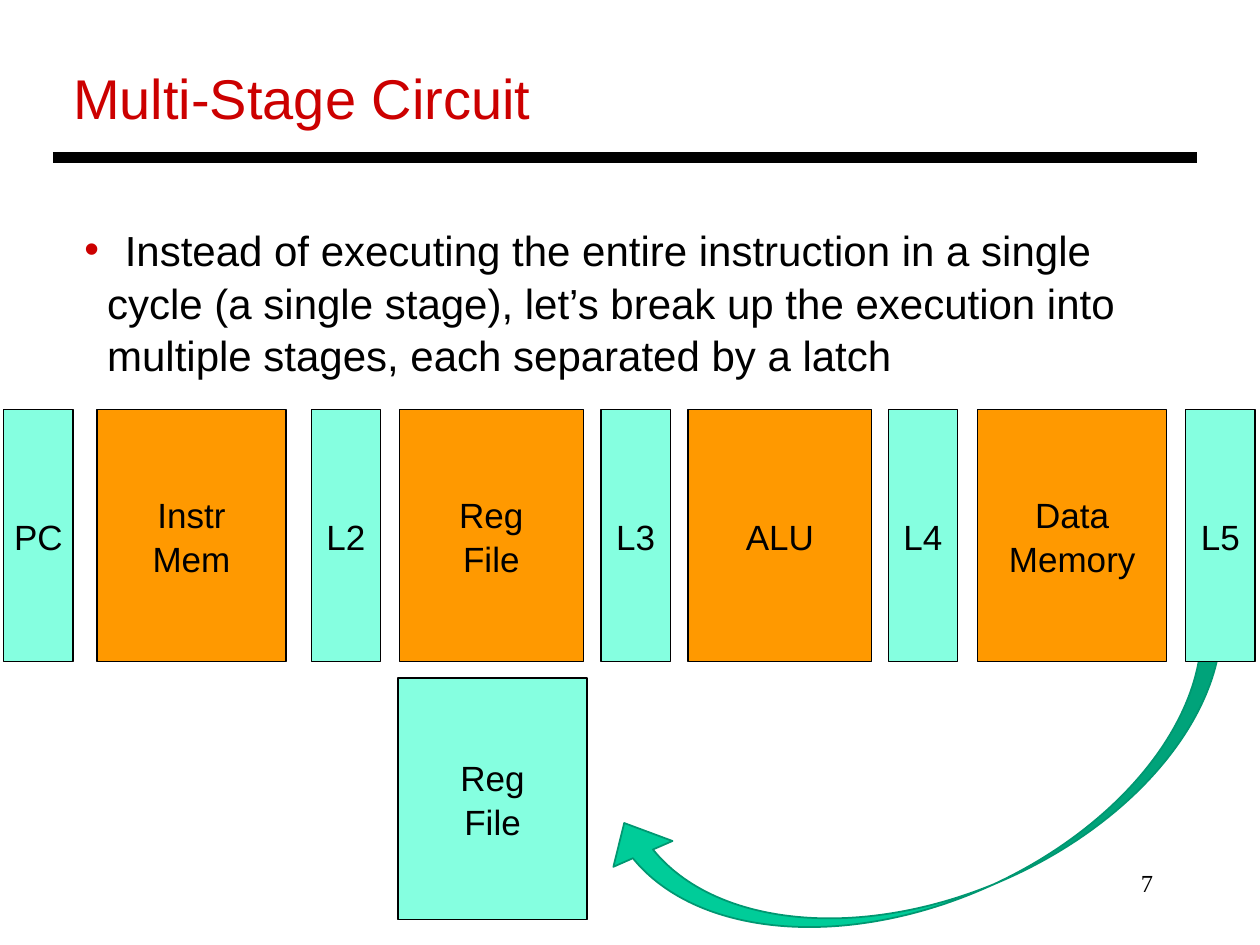
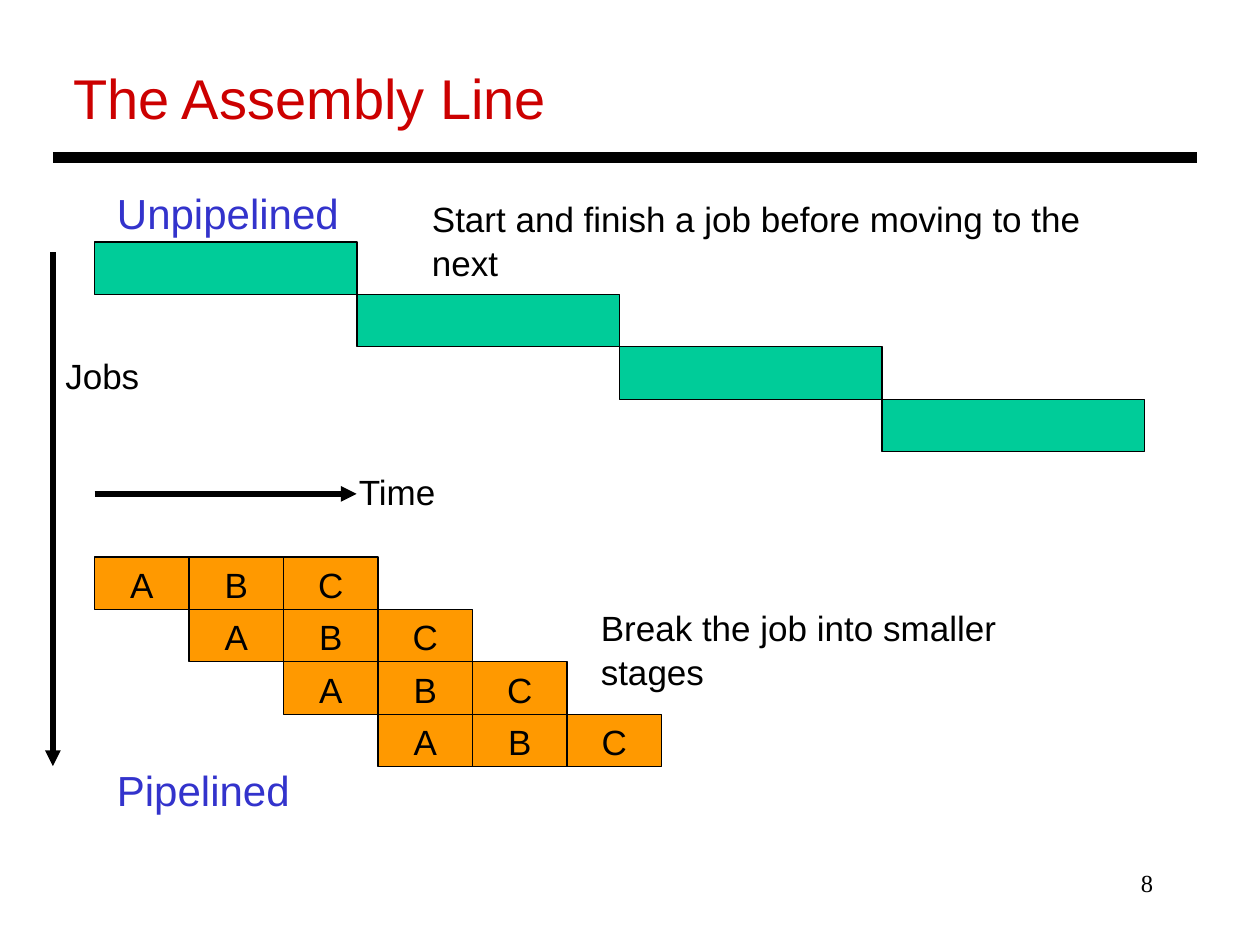
from pptx import Presentation
from pptx.dml.color import RGBColor
from pptx.enum.shapes import MSO_CONNECTOR, MSO_SHAPE
from pptx.enum.text import MSO_ANCHOR, MSO_AUTO_SIZE, PP_ALIGN
from pptx.oxml.ns import qn
from pptx.util import Inches, Pt
from lxml.etree import SubElement

BLACK = RGBColor(0x00, 0x00, 0x00)
RED = RGBColor(0xCC, 0x00, 0x00)
BLUE = RGBColor(0x33, 0x33, 0xCC)
AQUA = RGBColor(0x85, 0xFF, 0xE0)
ORANGE = RGBColor(0xFF, 0x99, 0x00)
GREEN = RGBColor(0x00, 0xCC, 0x99)
TEAL = RGBColor(0x00, 0x97, 0x71)

LIST, PLAIN = 1, 5


class Deck:
    def __init__(self):
        self.prs = Presentation()
        self.prs.slide_width = Inches(10)
        self.prs.slide_height = Inches(7.5)
        self.slide = None

    def style(self, frame, size, color=BLACK, align=PP_ALIGN.LEFT, font="Arial"):
        for para in frame.paragraphs:
            para.alignment = align
            para.line_spacing = 1.05
            para.space_before = Pt(0)
            for run in para.runs:
                run.font.size = Pt(size)
                run.font.name = font
                run.font.color.rgb = color

    def place(self, shape, left, top, width, height):
        shape.left, shape.top = Inches(left), Inches(top)
        shape.width, shape.height = Inches(width), Inches(height)
        frame = shape.text_frame
        frame.auto_size = MSO_AUTO_SIZE.NONE
        frame.vertical_anchor = MSO_ANCHOR.TOP
        frame.word_wrap = True
        return frame

    def page(self, layout, title, number):
        self.slide = self.prs.slides.add_slide(self.prs.slide_layouts[layout])
        frame = self.place(self.slide.shapes.title, 0.48, 0.43, 9, 0.64)
        frame.text = title
        self.style(frame, 32, RED)
        self.label(str(number), 7.17, 6.83, 2.08, 14, align=PP_ALIGN.RIGHT,
                   font="Times New Roman")
        self.line((0.42, 1.25), (9.5, 1.25), 6)

    def body(self, lines, left, top, width, height):
        frame = self.place(self.slide.placeholders[1], left, top, width, height)
        frame.text = "\n".join(lines)
        self.style(frame, 24)
        for i, para in enumerate(frame.paragraphs):
            props = para._p.get_or_add_pPr()
            first = i == 0
            props.set("marL", str(Inches(0.32 if first else 0.18)))
            props.set("indent", str(Inches(-0.32 if first else 0)))
            if first:
                tint = SubElement(props, qn("a:buClr"))
                SubElement(tint, qn("a:srgbClr"), val=str(RED))
                SubElement(props, qn("a:buChar"), char="•")
            else:
                SubElement(props, qn("a:buNone"))

    def label(self, text, left, top, width, size=20, color=BLACK, **look):
        box = self.slide.shapes.add_textbox(0, 0, 0, 0)
        frame = self.place(box, left, top, width, 0.5)
        frame.text = text
        self.style(frame, size, color, **look)

    def shape(self, kind, left, top, width, height, fill, edge=BLACK, weight=0.75):
        shape = self.slide.shapes.add_shape(
            kind, Inches(left), Inches(top), Inches(width), Inches(height))
        shape.shadow.inherit = False
        shape.fill.solid()
        shape.fill.fore_color.rgb = fill
        shape.line.color.rgb = edge
        shape.line.width = Pt(weight)
        return shape

    def box(self, left, top, width, height, fill, text=""):
        shape = self.shape(MSO_SHAPE.RECTANGLE, left, top, width, height, fill)
        if text:
            frame = shape.text_frame
            frame.text = text
            frame.word_wrap = False
            frame.vertical_anchor = MSO_ANCHOR.MIDDLE
            self.style(frame, 20, align=PP_ALIGN.CENTER)

    def swoop(self, left, top, width, height, turn, bends):
        shape = self.shape(MSO_SHAPE.CURVED_DOWN_ARROW, left, top, width, height,
                           GREEN, TEAL, 1)
        shape.rotation = turn
        for i, bend in enumerate(bends):
            shape.adjustments[i] = bend

    def line(self, start, end, weight, arrow=False):
        points = [Inches(v) for v in (*start, *end)]
        link = self.slide.shapes.add_connector(MSO_CONNECTOR.STRAIGHT, *points)
        link.line.color.rgb = BLACK
        link.line.width = Pt(weight)
        if arrow:
            SubElement(link.line._get_or_add_ln(), qn("a:tailEnd"), type="triangle")
        SubElement(link._element.spPr, qn("a:effectLst"))


def stages(deck):
    deck.page(LIST, "Multi-Stage Circuit", 7)
    deck.body(["Instead of executing the entire instruction in a single",
               "cycle (a single stage), let’s break up the execution into",
               "multiple stages, each separated by a latch"],
              0.57, 1.71, 8.8, 1.4)
    deck.swoop(4.82, 5.5, 5.33, 1.62, 156.4, (0.107, 0.316, 0.175))
    for text, left in (("PC", 0.03), ("L2", 2.47), ("L3", 4.77),
                       ("L4", 7.05), ("L5", 9.41)):
        deck.box(left, 3.25, 0.55, 2, AQUA, text)
    for text, left, width in (("Instr\nMem", 0.77, 1.5), ("Reg\nFile", 3.17, 1.46),
                              ("ALU", 5.46, 1.46), ("Data\nMemory", 7.76, 1.5)):
        deck.box(left, 3.25, width, 2, ORANGE, text)
    deck.box(3.16, 5.38, 1.5, 1.92, AQUA, "Reg\nFile")


def assembly(deck):
    deck.page(PLAIN, "The Assembly Line", 8)
    left, row, job, step = 0.75, 5 / 12, 25 / 12, 0.75
    for i in range(4):
        deck.box(left + i * job, 1.92 + i * row, job, row, GREEN)
        for j, name in enumerate("ABC"):
            deck.box(left + (i + j) * step, 4.42 + i * row, step, row, ORANGE, name)
    deck.line((0.42, 2), (0.42, 6.08), 3, arrow=True)
    deck.line((left, 3.92), (2.83, 3.92), 3, arrow=True)
    deck.label("Start and finish a job before moving to the next", 3.33, 1.5, 5.8)
    deck.label("Break the job into smaller stages", 4.67, 4.75, 4.1)
    deck.label("Time", 2.75, 3.67, 1)
    deck.label("Jobs", 0.42, 2.75, 1)
    deck.label("Unpipelined", 0.83, 1.42, 2.2, 24, BLUE)
    deck.label("Pipelined", 0.83, 6, 2.2, 24, BLUE)


def main():
    deck = Deck()
    stages(deck)
    assembly(deck)
    deck.prs.save("out.pptx")


if __name__ == "__main__":
    main()
